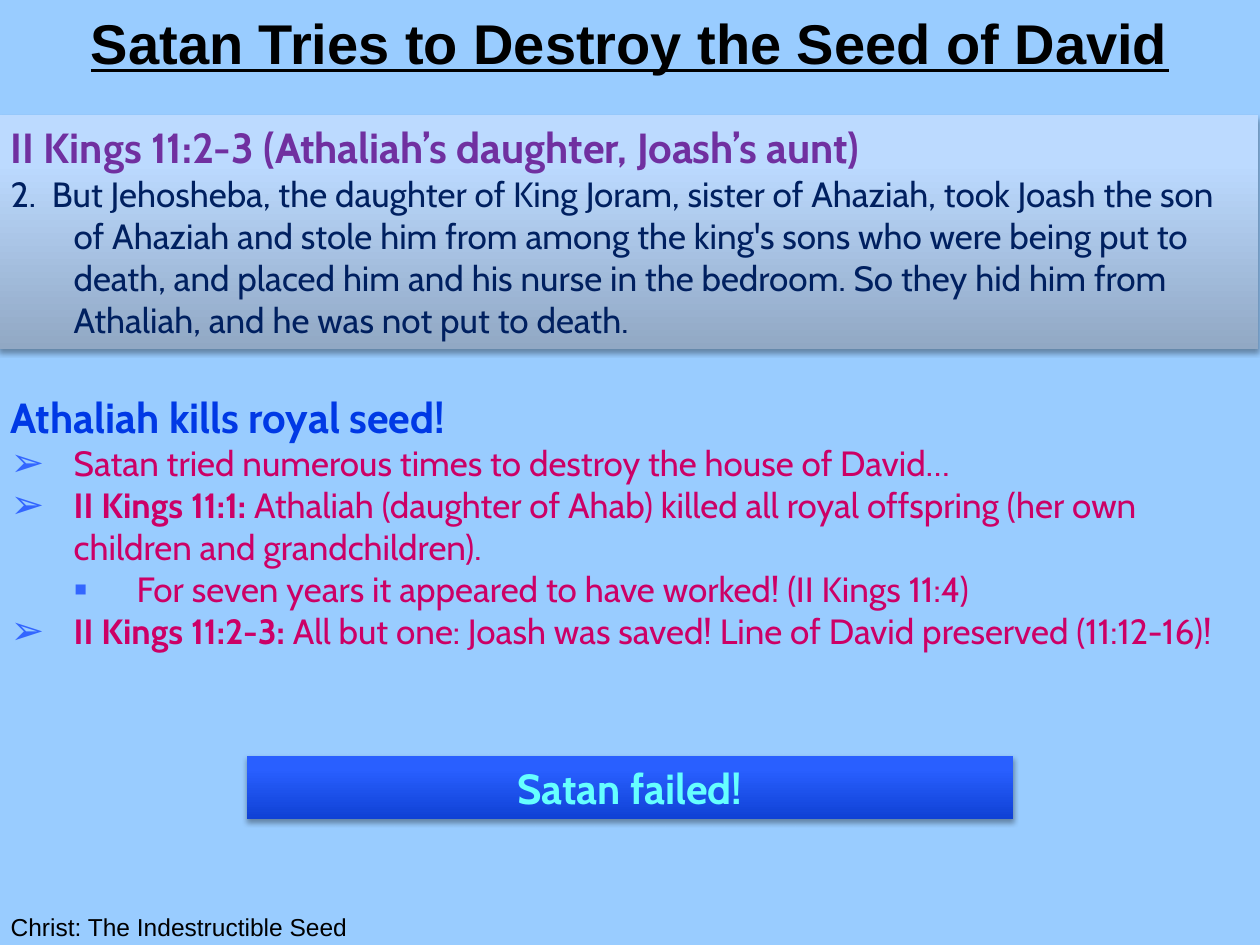
"""Build the slide "Satan Tries to Destroy the Seed of David"."""
from dataclasses import dataclass
from typing import Optional

from lxml.etree import SubElement
from pptx import Presentation
from pptx.dml.color import RGBColor
from pptx.enum.shapes import MSO_SHAPE
from pptx.enum.text import MSO_ANCHOR, PP_ALIGN
from pptx.oxml.ns import qn
from pptx.util import Pt

SKY = RGBColor(0x99, 0xCC, 0xFF)
BLACK = RGBColor(0x00, 0x00, 0x00)
PURPLE = RGBColor(0x70, 0x30, 0xA0)
NAVY = RGBColor(0x00, 0x20, 0x60)
BLUE = RGBColor(0x00, 0x39, 0xE5)
PINK = RGBColor(0xCC, 0x00, 0x66)
CYAN = RGBColor(0x66, 0xFF, 0xFF)
BULLET = RGBColor(0x33, 0x66, 0xFF)
PALE_STOPS = (
    (0, RGBColor(0x91, 0xA8, 0xC4)),
    (80, RGBColor(0xBC, 0xDA, 0xFF)),
    (100, RGBColor(0xBE, 0xDB, 0xFF)),
)
BRIGHT_STOPS = (
    (0, RGBColor(0x0F, 0x41, 0xD5)),
    (80, RGBColor(0x29, 0x5F, 0xFF)),
    (100, RGBColor(0x2B, 0x60, 0xFF)),
)
HANG = 36

TITLE = {"name": "Arial", "size": Pt(32), "bold": True, "underline": True}
FOOTER = {"name": "Arial", "size": Pt(14)}
HEADING = {"name": "Cabin", "size": Pt(24), "bold": True}
BODY = {"name": "Cabin", "size": Pt(20), "bold": False}
STRONG = {**BODY, "bold": True}


@dataclass
class Run:
    text: str
    style: dict
    color: RGBColor


@dataclass
class Para:
    runs: list[Run]
    level: Optional[int] = 0
    bullet: str = ""
    align: PP_ALIGN = PP_ALIGN.LEFT


@dataclass
class Box:
    left: float
    top: float
    width: float
    height: float
    paras: list[Para]
    stops: tuple = ()
    anchor: MSO_ANCHOR = MSO_ANCHOR.TOP


def add_xml(parent, tag: str, **attrs):
    """Append a DrawingML element and return it."""
    return SubElement(parent, qn(tag), {k: str(v) for k, v in attrs.items()})


def style_panel(s, stops: tuple) -> None:
    """Give a panel its vertical gradient and soft drop shadow."""
    s.line.fill.background()
    s.fill.gradient()
    s.fill.gradient_angle = 90
    sp_pr = s._element.spPr
    gs_list = sp_pr.find(qn("a:gradFill")).find(qn("a:gsLst"))
    for gs in list(gs_list):
        gs_list.remove(gs)
    for pos, color in stops:
        gs = add_xml(gs_list, "a:gs", pos=pos * 1000)
        add_xml(gs, "a:srgbClr", val=color)
    s.shadow.inherit = False
    shadow = add_xml(sp_pr.find(qn("a:effectLst")), "a:outerShdw", blurRad=Pt(3.1),
                     dist=Pt(1.8), dir=5400000, rotWithShape=0)
    add_xml(add_xml(shadow, "a:srgbClr", val=BLACK), "a:alpha", val=35000)


def write_para(p, para: Para) -> None:
    """Fill a paragraph with its indent, bullet and runs."""
    p.alignment = para.align
    if para.level is not None:
        p.level = para.level
        p_pr = p._p.get_or_add_pPr()
        p_pr.set("marL", str(Pt(HANG * (para.level + 1))))
        p_pr.set("indent", str(Pt(-HANG)))
        if para.bullet:
            add_xml(add_xml(p_pr, "a:buClr"), "a:srgbClr", val=BULLET)
            add_xml(p_pr, "a:buSzPct", val=115000)
            add_xml(p_pr, "a:buFont", typeface="Arial")
            add_xml(p_pr, "a:buChar", char=para.bullet)
    for run in para.runs:
        r = p.add_run()
        r.text = run.text
        for name, value in run.style.items():
            setattr(r.font, name, value)
        r.font.color.rgb = run.color


def add_box(shapes, box: Box) -> None:
    """Draw a text box, or a gradient panel when stops are given."""
    frame = [Pt(v) for v in (box.left, box.top, box.width, box.height)]
    if box.stops:
        s = shapes.add_shape(MSO_SHAPE.RECTANGLE, *frame)
        style_panel(s, box.stops)
    else:
        s = shapes.add_textbox(*frame)
    tf = s.text_frame
    tf.word_wrap = True
    tf.vertical_anchor = box.anchor
    for i, para in enumerate(box.paras):
        write_para(tf.add_paragraph() if i else tf.paragraphs[0], para)


def point(text: str, lead: str = "", level: int = 0) -> Para:
    """Return a bulleted point with an optional bold lead."""
    runs = [Run(lead, STRONG, PINK)] if lead else []
    return Para(runs + [Run(text, BODY, PINK)], level, "➢▪"[level])


BOXES = [
    Box(0, 0, 720, 48, [
        Para([Run("Satan Tries to Destroy the Seed of David", TITLE, BLACK)],
             None, align=PP_ALIGN.CENTER),
    ], anchor=MSO_ANCHOR.MIDDLE),
    Box(-1, 517.5, 211, 24, [
        Para([Run("Christ: The Indestructible Seed", FOOTER, BLACK)], None),
    ]),
    Box(-1, 66, 720, 133.5, [
        Para([Run("II Kings 11:2-3 (Athaliah’s daughter, Joash’s aunt)", HEADING, PURPLE)]),
        Para([Run("2.  But Jehosheba, the daughter of King Joram, sister of Ahaziah, "
                  "took Joash the son of Ahaziah and stole him from among the king's "
                  "sons who were being put to death, and placed him and his nurse in "
                  "the bedroom. So they hid him from Athaliah, and he was not put to "
                  "death.", BODY, NAVY)]),
    ], PALE_STOPS),
    Box(-1, 220, 721, 181.5, [
        Para([Run("Athaliah kills royal seed!", HEADING, BLUE)]),
        point("Satan tried numerous times to destroy the house of David…"),
        point("Athaliah (daughter of Ahab) killed all royal offspring "
              "(her own children and grandchildren).", "II Kings 11:1: "),
        point("For seven years it appeared to have worked! (II Kings 11:4)", level=1),
        point("All but one: Joash was saved! Line of David preserved (11:12-16)!",
              "II Kings 11:2-3: "),
    ]),
    Box(141, 432, 438, 36, [
        Para([Run("Satan failed!", HEADING, CYAN)], align=PP_ALIGN.CENTER),
    ], BRIGHT_STOPS),
]


def main() -> None:
    """Build and save the slide."""
    prs = Presentation()
    prs.slide_width, prs.slide_height = Pt(720), Pt(540)
    slide = prs.slides.add_slide(prs.slide_layouts[6])
    slide.background.fill.solid()
    slide.background.fill.fore_color.rgb = SKY
    for box in BOXES:
        add_box(slide.shapes, box)
    prs.save("out.pptx")


if __name__ == "__main__":
    main()
